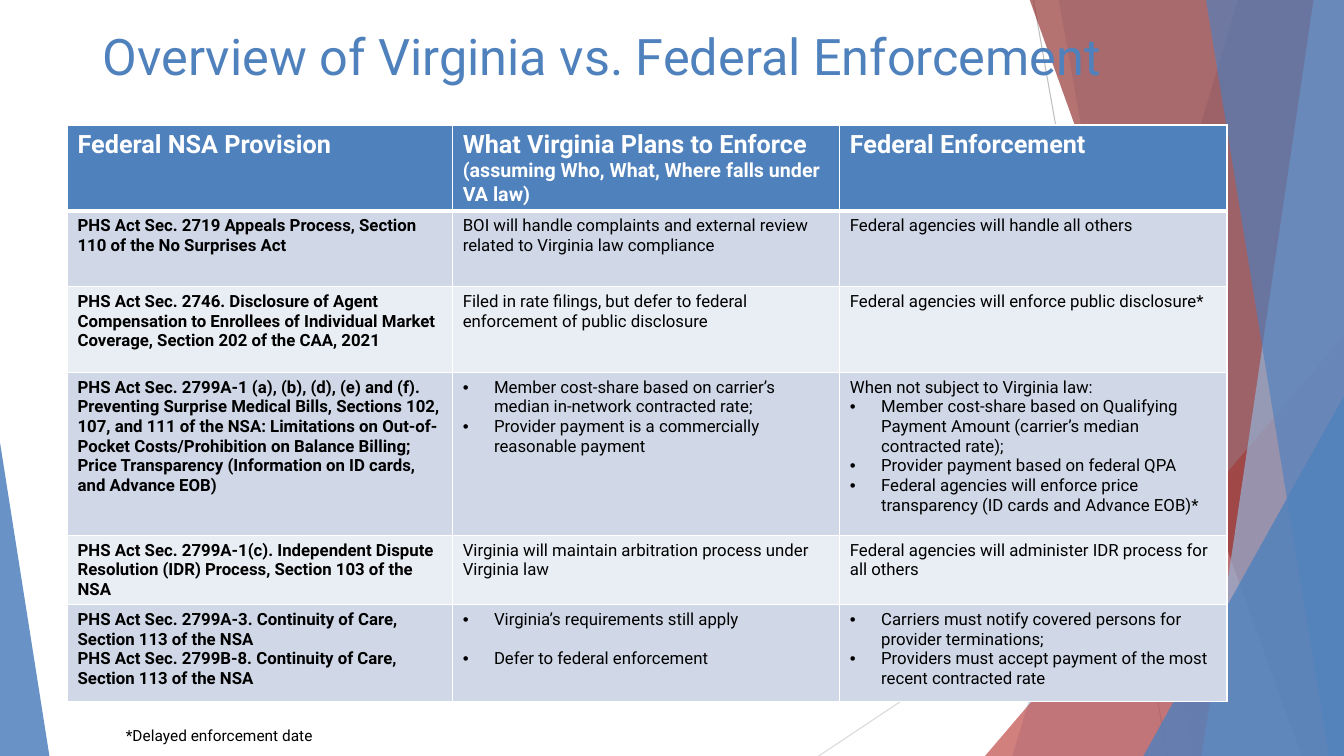
from dataclasses import dataclass

from lxml.etree import SubElement
from pptx import Presentation
from pptx.dml.color import RGBColor
from pptx.enum.shapes import MSO_CONNECTOR, MSO_SHAPE
from pptx.enum.text import MSO_ANCHOR, MSO_AUTO_SIZE, PP_ALIGN
from pptx.oxml import parse_xml
from pptx.oxml.ns import nsdecls, qn
from pptx.util import Inches, Pt

FONT = "Roboto"
BLUE = RGBColor(0x4F, 0x81, 0xBD)
LIGHT_BLUE = RGBColor(0x95, 0xB3, 0xD7)
RED = RGBColor(0xC0, 0x50, 0x4D)
DARK_RED = RGBColor(0x95, 0x37, 0x35)
BAND_DARK = RGBColor(0xD0, 0xD8, 0xE8)
BAND_LIGHT = RGBColor(0xE9, 0xED, 0xF4)
GRAY = RGBColor(0xBF, 0xBF, 0xBF)
PALE_GRAY = RGBColor(0xD9, 0xD9, 0xD9)
WHITE = RGBColor(0xFF, 0xFF, 0xFF)
BLACK = RGBColor(0, 0, 0)

WIDTH, HEIGHT, BLEED_TOP = 13.33, 7.5, -0.01


@dataclass
class Ray:
    start: tuple[float, float]
    end: tuple[float, float]
    color: RGBColor


@dataclass
class Panel:
    """A facet that runs from its slanted left edge to the right slide edge."""
    top_x: float
    bottom_x: float
    color: RGBColor
    alpha: int


@dataclass
class Wedge:
    """A triangle standing on the bottom edge; apex 0 is left, 1 is right."""
    left: float
    top: float
    width: float
    apex: int
    color: RGBColor
    alpha: int


@dataclass
class Para:
    text: str
    bullet: bool = False
    before: int = 0


def item(text: str, before: int = 0) -> Para:
    return Para(text, True, before)


BACKDROP = [
    Ray((10.25, 0), (11.58, HEIGHT), GRAY),
    Ray((WIDTH, 4.03), (8.12, HEIGHT), PALE_GRAY),
    Panel(12.28, 10.04, BLUE, 30),
    Panel(10.5, 11.83, BLUE, 20),
    Wedge(9.77, 3.33, 3.56, 1, RED, 72),
    Panel(10.21, 12.91, DARK_RED, 70),
    Panel(13.03, 11.92, LIGHT_BLUE, 70),
    Panel(11.96, 13.18, BLUE, 65),
    Wedge(11.34, 3.93, 1.99, 1, BLUE, 80),
    Wedge(0, 4.39, 0.49, 0, BLUE, 85),
]

COL_WIDTHS = [3.82, 3.84, 3.84]
ROW_HEIGHTS = [0.82, 0.75, 0.85, 1.62, 0.66, 0.96]
HEADERS = [
    ("Federal NSA Provision", ""),
    ("What Virginia Plans to Enforce ", "(assuming Who, What, Where falls under VA law)"),
    ("Federal Enforcement", ""),
]
ROWS = [
    [[Para("PHS Act Sec. 2719 Appeals Process, Section 110 of the No Surprises Act")],
     [Para("BOI will handle complaints and external review related to Virginia law compliance")],
     [Para("Federal agencies will handle all others")]],
    [[Para("PHS Act Sec. 2746. Disclosure of Agent Compensation to Enrollees of "
           "Individual Market Coverage, Section 202 of the CAA, 2021")],
     [Para("Filed in rate filings, but defer to federal enforcement of public disclosure")],
     [Para("Federal agencies will enforce public disclosure*")]],
    [[Para("PHS Act Sec. 2799A-1 (a), (b), (d), (e) and (f). Preventing Surprise Medical "
           "Bills, Sections 102, 107, and 111 of the NSA: Limitations on Out-of-Pocket "
           "Costs/Prohibition on Balance Billing; Price Transparency (Information on ID "
           "cards, and Advance EOB)")],
     [item("Member cost-share based on carrier’s median in-network contracted rate;"),
      item("Provider payment is a commercially reasonable payment")],
     [Para("When not subject to Virginia law:"),
      item("Member cost-share based on Qualifying Payment Amount "
           "(carrier’s median contracted rate);"),
      item("Provider payment based on federal QPA"),
      item("Federal agencies will enforce price transparency (ID cards and Advance EOB)*")]],
    [[Para("PHS Act Sec. 2799A-1(c). Independent Dispute Resolution (IDR) Process, "
           "Section 103 of the NSA")],
     [Para("Virginia will maintain arbitration process under Virginia law")],
     [Para("Federal agencies will administer IDR process for all others")]],
    [[Para("PHS Act Sec. 2799A-3. Continuity of Care, Section 113 of the NSA"),
      Para("PHS Act Sec. 2799B-8. Continuity of Care, Section 113 of the NSA")],
     [item("Virginia’s requirements still apply"),
      item("Defer to federal enforcement", before=14)],
     [item("Carriers must notify covered persons for provider terminations;"),
      item("Providers must accept payment of the most recent contracted rate")]],
]


def style_run(r, size: float, color: RGBColor, bold: bool = False) -> None:
    r.font.name, r.font.size, r.font.bold = FONT, Pt(size), bold
    r.font.color.rgb = color


def fill_facet(sp, color: RGBColor, alpha: int) -> None:
    sp.shadow.inherit = False
    sp.line.fill.background()
    sp.fill.solid()
    sp.fill.fore_color.rgb = color
    clr = sp._element.spPr.find(qn("a:solidFill"))[0]
    SubElement(clr, qn("a:alpha"), val=str(alpha * 1000))


def draw_ray(s, ray: Ray) -> None:
    points = [Inches(v) for v in ray.start + ray.end]
    line = s.shapes.add_connector(MSO_CONNECTOR.STRAIGHT, *points)
    line.line.color.rgb, line.line.width = ray.color, Pt(0.75)
    SubElement(line._element.spPr, qn("a:effectLst"))


def draw_panel(s, panel: Panel) -> None:
    corners = [(panel.top_x, BLEED_TOP), (WIDTH, BLEED_TOP),
               (WIDTH, HEIGHT), (panel.bottom_x, HEIGHT)]
    points = [(Inches(x), Inches(y)) for x, y in corners]
    outline = s.shapes.build_freeform(*points[0])
    outline.add_line_segments(points[1:], close=True)
    fill_facet(outline.convert_to_shape(), panel.color, panel.alpha)


def draw_wedge(s, wedge: Wedge) -> None:
    sp = s.shapes.add_shape(MSO_SHAPE.ISOSCELES_TRIANGLE, Inches(wedge.left), Inches(wedge.top),
                            Inches(wedge.width), Inches(HEIGHT - wedge.top))
    sp.adjustments[0] = wedge.apex
    fill_facet(sp, wedge.color, wedge.alpha)


def format_cell(cell, fill: RGBColor, bottom: float = 1, top: float = 1) -> None:
    cell.fill.solid()
    cell.fill.fore_color.rgb = fill
    borders = {"lnL": 1, "lnR": 1, "lnT": top, "lnB": bottom}
    for i, (tag, width) in enumerate(borders.items()):
        cell._tc.get_or_add_tcPr().insert(i, parse_xml(
            f'<a:{tag} {nsdecls("a")} w="{Pt(width)}"><a:solidFill>'
            f'<a:srgbClr val="{WHITE}"/></a:solidFill></a:{tag}>'))


def write_para(p, para: Para, bold: bool) -> None:
    p.text = para.text
    style_run(p.runs[0], 12, BLACK, bold)
    if para.before:
        p.space_before = Pt(para.before)
    if para.bullet:
        pPr = p._p.get_or_add_pPr()
        pPr.set("marL", str(Inches(0.31)))
        pPr.set("indent", str(-Inches(0.31)))
        SubElement(pPr, qn("a:buFont"), typeface="Arial")
        SubElement(pPr, qn("a:buChar"), char="•")


def draw_table(s) -> None:
    table = s.shapes.add_table(len(ROW_HEIGHTS), len(COL_WIDTHS), Inches(0.67), Inches(1.24),
                               Inches(sum(COL_WIDTHS)), Inches(sum(ROW_HEIGHTS))).table
    for col, width in zip(table.columns, COL_WIDTHS):
        col.width = Inches(width)
    for row, height in zip(table.rows, ROW_HEIGHTS):
        row.height = Inches(height)
    for c, (heading, note) in enumerate(HEADERS):
        cell = table.cell(0, c)
        format_cell(cell, BLUE, bottom=3)
        p = cell.text_frame.paragraphs[0]
        p.text = heading
        style_run(p.runs[0], 18, WHITE, True)
        if note:
            r = p.add_run()
            r.text = note
            style_run(r, 14, WHITE, True)
    for i, row in enumerate(ROWS, 1):
        for c, paras in enumerate(row):
            cell = table.cell(i, c)
            format_cell(cell, BAND_DARK if i % 2 else BAND_LIGHT, top=3 if i == 1 else 1)
            tf = cell.text_frame
            for n, para in enumerate(paras):
                write_para(tf.add_paragraph() if n else tf.paragraphs[0], para, bold=c == 0)


def main() -> None:
    prs = Presentation()
    prs.slide_width, prs.slide_height = Inches(WIDTH), Inches(HEIGHT)
    s = prs.slides.add_slide(prs.slide_layouts[5])
    title = s.shapes.title
    draw = {Ray: draw_ray, Panel: draw_panel, Wedge: draw_wedge}
    for part in BACKDROP:
        draw[type(part)](s, part)

    title._element.getparent().append(title._element)
    title.left, title.top = Inches(0.92), Inches(0.2)
    title.width, title.height = Inches(11.5), Inches(1.45)
    tf = title.text_frame
    tf.text = "Overview of Virginia vs. Federal Enforcement"
    tf.vertical_anchor, tf.auto_size = MSO_ANCHOR.TOP, MSO_AUTO_SIZE.NONE
    tf.paragraphs[0].alignment = PP_ALIGN.LEFT
    style_run(tf.paragraphs[0].runs[0], 36, BLUE)

    draw_table(s)

    tf = s.shapes.add_textbox(Inches(1.15), Inches(7.15), Inches(4.65), Inches(0.29)).text_frame
    tf.word_wrap = True
    tf.text = "*Delayed enforcement date"
    style_run(tf.paragraphs[0].runs[0], 11, BLACK)
    prs.save("out.pptx")


if __name__ == "__main__":
    main()
